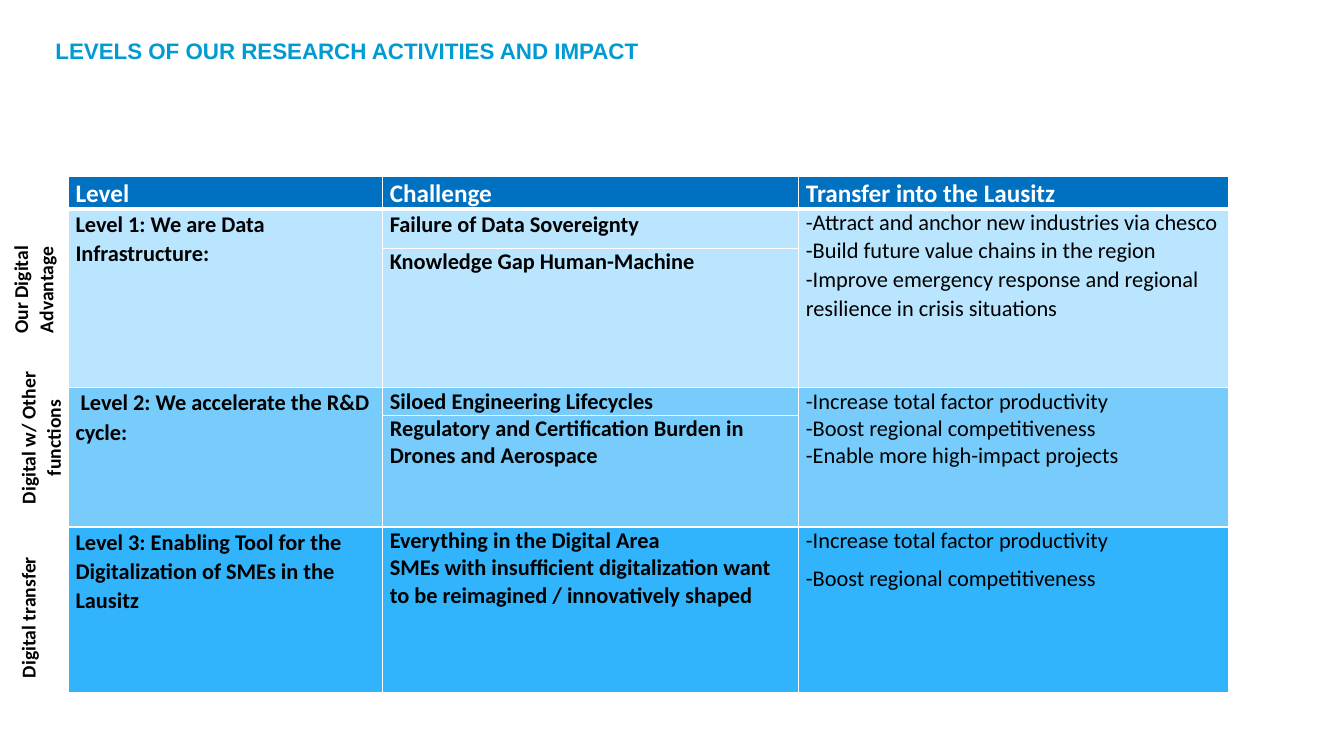
from lxml import etree
from pptx import Presentation
from pptx.dml.color import RGBColor
from pptx.enum.text import MSO_ANCHOR, MSO_AUTO_SIZE, PP_ALIGN
from pptx.oxml.ns import qn
from pptx.util import Inches, Pt

COLUMNS = [3.12, 4.13, 4.27]
ROWS = [0.32, 0.39, 1.38, 0.27, 1.11, 1.64]
FILLS = ["0070C0", "B9E6FE", "B9E6FE", "77CCFC", "77CCFC", "31B4FC"]
LOOSE = 1.07

# (row, column, row span, paragraphs as (text, line spacing, space before))
CELLS = [
    (0, 0, 1, [("Level", LOOSE, 0)]),
    (0, 1, 1, [("Challenge", LOOSE, 0)]),
    (0, 2, 1, [("Transfer into the Lausitz", LOOSE, 0)]),
    (1, 0, 2, [("Level 1: We are Data Infrastructure:", LOOSE, 0)]),
    (1, 1, 1, [("Failure of Data Sovereignty", LOOSE, 0)]),
    (1, 2, 2, [("-Attract and anchor new industries via chesco", 1, 0),
               ("-Build future value chains in the region", 1, 0),
               ("-Improve emergency response and regional resilience in crisis situations",
                LOOSE, 0)]),
    (2, 1, 1, [("Knowledge Gap Human-Machine", 1, 0)]),
    (3, 0, 2, [(" Level 2: We accelerate the R&D cycle:", LOOSE, 0)]),
    (3, 1, 1, [("Siloed Engineering Lifecycles", 1, 0)]),
    (3, 2, 2, [("-Increase total factor productivity", 1, 0),
               ("-Boost regional competitiveness", 1, 0),
               ("-Enable more high-impact projects", 1, 0)]),
    (4, 1, 1, [("Regulatory and Certification Burden in Drones and Aerospace", 1, 0)]),
    (5, 0, 1, [("Level 3: Enabling Tool for the Digitalization of SMEs in the Lausitz",
                LOOSE, 0)]),
    (5, 1, 1, [("Everything in the Digital Area", 1, 0),
               ("SMEs with insufficient digitalization want to be reimagined / "
                "innovatively shaped", 1, 0)]),
    (5, 2, 1, [("-Increase total factor productivity", 1, 0),
               ("-Boost regional competitiveness", 1, 8)]),
]

SIDE_LABELS = [
    ("Our Digital Advantage", (-0.55, 2.58, 1.73, 0.59), PP_ALIGN.CENTER),
    ("Digital w/ Other functions", (-0.44, 4.05, 1.66, 0.59), PP_ALIGN.CENTER),
    ("Digital transfer", (-0.94, 5.45, 2.41, 0.34), PP_ALIGN.LEFT),
]


def rgb(color):
    """Turn a hex string into a colour."""
    return RGBColor.from_string(color)


def format_runs(p, size, color, bold=True, name="Calibri"):
    """Format every run of a paragraph."""
    for r in p.runs:
        r.font.name, r.font.size, r.font.bold = name, Pt(size), bold
        r.font.color.rgb = rgb(color)


def set_borders(cell, bottom):
    """Draw white borders, with the bottom one as wide as asked."""
    tcPr = cell._tc.get_or_add_tcPr()
    for i, (side, width) in enumerate(zip("LRTB", (1, 1, 1, bottom))):
        ln = etree.Element(qn(f"a:ln{side}"), w=str(Pt(width)))
        fill = etree.SubElement(ln, qn("a:solidFill"))
        etree.SubElement(fill, qn("a:srgbClr"), val="FFFFFF")
        tcPr.insert(i, ln)


def add_title(slide, box):
    """Place the slide title."""
    title = slide.shapes.title
    title.left, title.top, title.width, title.height = map(Inches, box)
    tf = title.text_frame
    tf.margin_left = tf.margin_right = tf.margin_top = tf.margin_bottom = 0
    tf.vertical_anchor = MSO_ANCHOR.TOP
    tf.word_wrap = True
    tf.text = "LEVELS OF OUR RESEARCH ACTIVITIES AND IMPACT"
    p = tf.paragraphs[0]
    p.alignment, p.line_spacing = PP_ALIGN.LEFT, 0.9
    format_runs(p, 16, "009BD2", name="Arial")


def fill_cell(cell, row, column, paragraphs):
    """Write the paragraphs of one table cell."""
    tf = cell.text_frame
    tf.text = "\n".join(text for text, _, _ in paragraphs)
    for p, (_, spacing, before) in zip(tf.paragraphs, paragraphs):
        p.line_spacing = spacing
        if before:
            p.space_before = Pt(before)
        if row == 0:
            format_runs(p, 18, "FFFFFF")
        else:
            format_runs(p, 16, "000000", bold=column < 2)


def add_levels_table(slide, left, top):
    """Build the table of levels, challenges and transfer."""
    table = slide.shapes.add_table(
        len(ROWS), len(COLUMNS), Inches(left), Inches(top),
        Inches(sum(COLUMNS)), Inches(sum(ROWS))).table
    table.horz_banding = False
    for column, width in zip(table.columns, COLUMNS):
        column.width = Inches(width)
    for i, (row, height) in enumerate(zip(table.rows, ROWS)):
        row.height = Inches(height)
        for cell in row.cells:
            cell.margin_left = cell.margin_right = Inches(0.07)
            cell.margin_top = cell.margin_bottom = 0
            cell.fill.solid()
            cell.fill.fore_color.rgb = rgb(FILLS[i])
            set_borders(cell, 3 if i == 0 else 1)
    for row, column, span, paragraphs in CELLS:
        cell = table.cell(row, column)
        if span > 1:
            cell.merge(table.cell(row + span - 1, column))
        fill_cell(cell, row, column, paragraphs)


def add_side_label(slide, text, box, alignment):
    """Add a label that reads upwards beside the table."""
    s = slide.shapes.add_textbox(*map(Inches, box))
    s.rotation = 270
    tf = s.text_frame
    tf.word_wrap = True
    tf.auto_size = MSO_AUTO_SIZE.SHAPE_TO_FIT_TEXT
    tf.text = text
    p = tf.paragraphs[0]
    p.alignment, p.line_spacing = alignment, LOOSE
    format_runs(p, 14, "000000")


def main():
    """Build and save the slide."""
    prs = Presentation()
    prs.slide_width, prs.slide_height = Inches(13.34), Inches(7.5)
    slide = prs.slides.add_slide(prs.slide_layouts[5])
    add_title(slide, (0.55, 0.4, 12.03, 1.15))
    add_levels_table(slide, 0.68, 1.75)
    for text, box, alignment in SIDE_LABELS:
        add_side_label(slide, text, box, alignment)
    prs.save("out.pptx")


if __name__ == "__main__":
    main()
